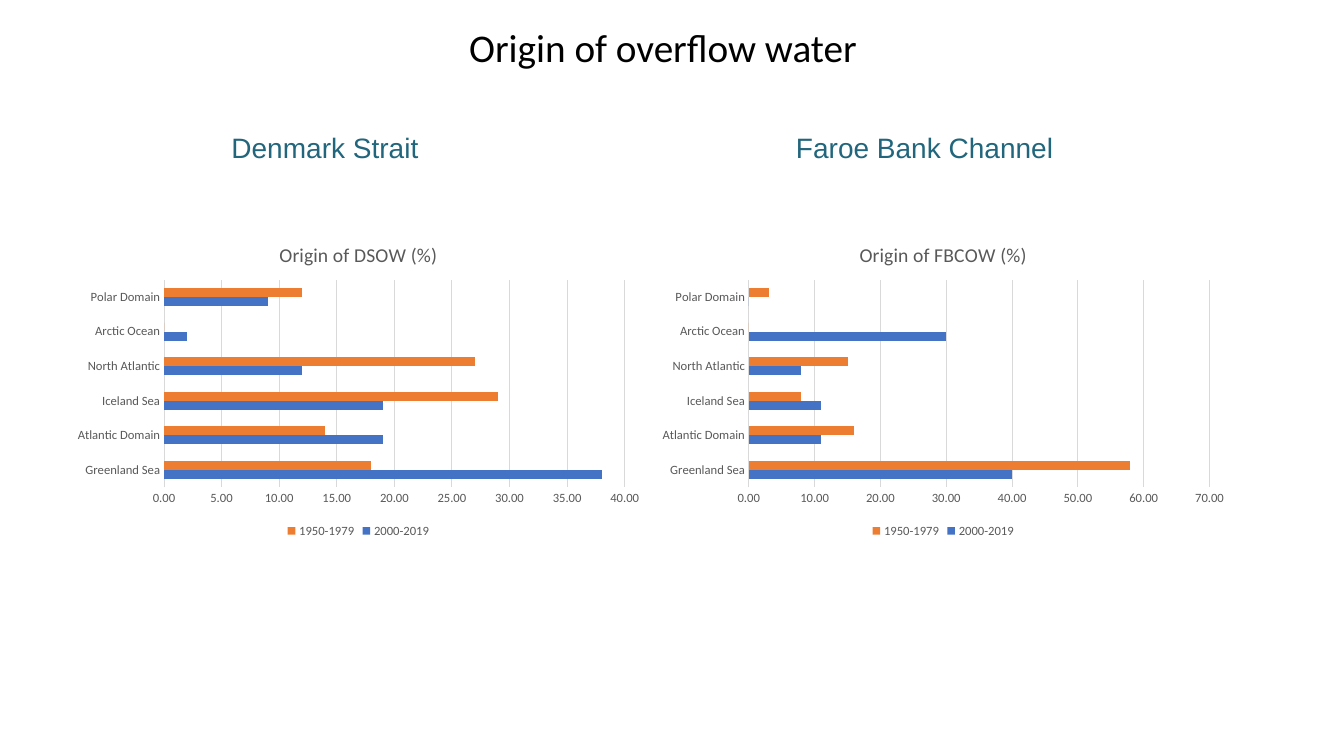
"""Builds the slide comparing the origins of overflow water in two channels."""
from pptx import Presentation
from pptx.chart.data import CategoryChartData
from pptx.dml.color import RGBColor
from pptx.enum.chart import XL_CHART_TYPE as ChartType, XL_LEGEND_POSITION as LegendPos, XL_TICK_MARK as Tick
from pptx.enum.text import MSO_ANCHOR as Anchor, PP_ALIGN as Align
from pptx.util import Inches, Pt

BLACK = RGBColor(0x00, 0x00, 0x00)
TEAL = RGBColor(0x21, 0x66, 0x7C)
GREY = RGBColor(0x59, 0x59, 0x59)
RULE = RGBColor(0xD9, 0xD9, 0xD9)
BLUE = RGBColor(0x44, 0x72, 0xC4)
ORANGE = RGBColor(0xED, 0x7D, 0x31)

WIDTH, HEIGHT = Inches(13.33), Inches(7.5)
COLUMN, ROW = Inches(0.1), Inches(0.1)

REGIONS = ["Greenland Sea", "Atlantic Domain", "Iceland Sea",
           "North Atlantic", "Arctic Ocean", "Polar Domain"]
PERIODS = {"2000-2019": BLUE, "1950-1979": ORANGE}
CHANNELS = [
    ("Denmark Strait", 22.95, 19.2, "Origin of DSOW (%)",
     [38, 19, 19, 12, 2, 9], [18, 14, 29, 27, 0, 12]),
    ("Faroe Bank Channel", 78.95, 28.7, "Origin of FBCOW (%)",
     [40, 11, 11, 8, 30, 0], [58, 16, 8, 15, 0, 3]),
]
CHART_LEFT, CHART_TOP, CHART_COLUMNS, CHART_ROWS = 6.55, 22.4, 58, 31.4


class OverflowSlide:
    """Holds the slide and its style, measured in grid columns and rows."""

    def __init__(self, deck):
        self.slide = deck.slides.add_slide(deck.slide_layouts[6])
        self.body_font = "Calibri"
        self.heading_font = "Arial"

    def place(self, column, row, columns, rows):
        """Turns grid units into slide lengths."""
        return (round(column * COLUMN), round(row * ROW),
                round(columns * COLUMN), round(rows * ROW))

    def style(self, font, size, color, name=None):
        """Applies size, colour and typeface to a font."""
        font.size, font.name = Pt(size), name or self.body_font
        font.bold = False
        font.color.rgb = color

    def text(self, wording, area, size, color, font_name, align=Align.LEFT):
        """Adds one line of text standing on the bottom of its area."""
        frame = self.slide.shapes.add_textbox(*self.place(*area)).text_frame
        frame.word_wrap = True
        frame.vertical_anchor = Anchor.BOTTOM
        frame.margin_left = frame.margin_right = 0
        frame.margin_top = frame.margin_bottom = 0
        line = frame.paragraphs[0]
        line.alignment = align
        run = line.add_run()
        run.text = wording
        self.style(run.font, size, color, font_name)

    def chart(self, title, shares, area):
        """Adds a clustered bar chart of origin shares by period."""
        origins = CategoryChartData(number_format="0.00")
        origins.categories = REGIONS
        for period, values in zip(PERIODS, shares):
            origins.add_series(period, values)
        chart = self.slide.shapes.add_chart(
            ChartType.BAR_CLUSTERED, *self.place(*area), origins).chart
        self.style(chart.font, 10, BLACK)

        chart.has_title = True
        heading = chart.chart_title.text_frame.paragraphs[0].add_run()
        heading.text = title
        self.style(heading.font, 14, GREY)
        chart.chart_title.include_in_layout = False

        chart.has_legend = True
        chart.legend.position = LegendPos.BOTTOM
        chart.legend.include_in_layout = False
        self.style(chart.legend.font, 9, GREY)

        bars = chart.plots[0]
        bars.gap_width, bars.overlap = 182, 0
        bars.vary_by_categories = False
        for series, color in zip(bars.series, PERIODS.values()):
            series.format.fill.solid()
            series.format.fill.fore_color.rgb = color
        self.axes(chart.category_axis, chart.value_axis)

    def axes(self, regions, percent):
        """Styles the region and percent axes."""
        for axis in (regions, percent):
            axis.major_tick_mark = axis.minor_tick_mark = Tick.NONE
            self.style(axis.tick_labels.font, 9, GREY)
        percent.has_major_gridlines = True
        percent.format.line.fill.background()
        percent.tick_labels.number_format = "0.00"
        percent.tick_labels.number_format_is_linked = False
        for line in (regions.format.line, percent.major_gridlines.format.line):
            line.color.rgb = RULE
            line.width = Pt(0.75)


def main():
    """Builds and saves the deck."""
    deck = Presentation()
    deck.slide_width, deck.slide_height = WIDTH, HEIGHT
    page = OverflowSlide(deck)
    page.text("Origin of overflow water", (0, 2.25, 131.5, 4.7), 28, BLACK,
              page.body_font, Align.CENTER)
    for index, (channel, column, columns, title, *shares) in enumerate(CHANNELS):
        page.text(channel, (column, 12.9, columns, 3.4), 20, TEAL, page.heading_font)
        left = CHART_LEFT + index * CHART_COLUMNS
        page.chart(title, shares, (left, CHART_TOP, CHART_COLUMNS, CHART_ROWS))
    deck.save("out.pptx")


if __name__ == "__main__":
    main()
